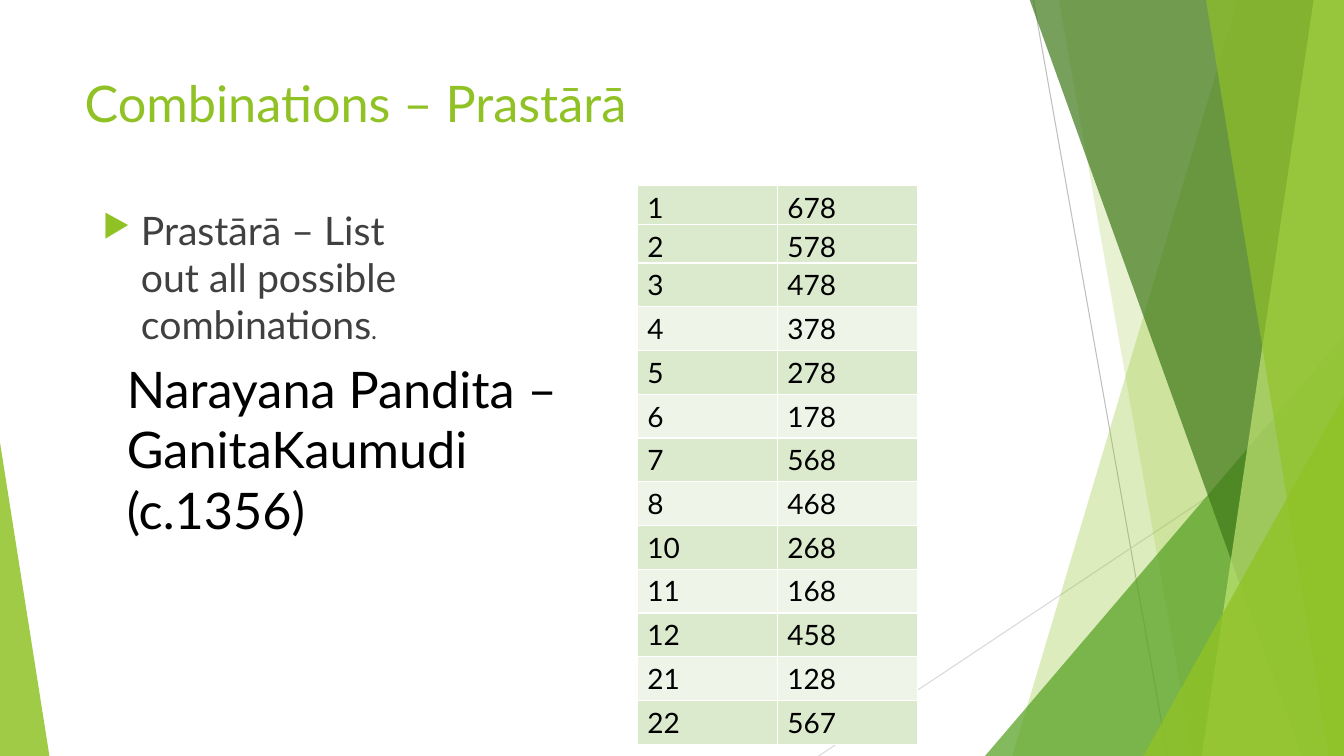
from lxml import etree
from pptx import Presentation
from pptx.dml.color import RGBColor
from pptx.enum.shapes import MSO_CONNECTOR, MSO_SHAPE
from pptx.enum.text import MSO_ANCHOR, PP_ALIGN
from pptx.oxml.ns import qn
from pptx.util import Pt

LINE = MSO_CONNECTOR.STRAIGHT
WEDGE = MSO_SHAPE.ISOSCELES_TRIANGLE
TOP, LEFT = MSO_ANCHOR.TOP, PP_ALIGN.LEFT

PX = 9144  # 100 px to the inch
WIDE, HIGH = 1333, 750
FONT = "Lato"
COLORS = {
    "lime": "90C226", "leaf": "54A021", "moss": "3F7819", "pale": "C0E474",
    "gray": "BFBFBF", "mist": "D9D9D9", "text": "404040", "black": "000000",
    "white": "FFFFFF", "dark row": "DBE9CD", "light row": "EEF4E8",
}

# Content
TITLE = "Combinations – Prastārā"
POINT = ["Prastārā – List out all possible combinations", "."]
SOURCE = "Narayana Pandita – GanitaKaumudi\v(c.1356)"
TABLES = [
    (184, [(1, 678)]),
    (223, [(2, 578)]),
    (261, [(3, 478), (4, 378), (5, 278), (6, 178), (7, 568), (8, 468),
           (10, 268), (11, 168), (12, 458), (21, 128), (22, 567)]),
]
TABLE_X, COL, ROW = 632, 139, 41

# Decoration: lines as x1, y1, x2, y2; bands as top x, bottom x;
# wedges as left, top, width, apex side
RAYS = [((1025, 0, 1158, HIGH), "gray"), ((1333, 403, 812, HIGH), "mist")]
DECOR = [
    ((1228, 1004), "lime", 30),
    ((1050, 1183), "lime", 20),
    ((977, 333, 356, 1), "leaf", 72),
    ((1021, 1291), "moss", 70),
    ((1303, 1192), "pale", 70),
    ((1196, 1318), "lime", 65),
    ((1134, 393, 199, 1), "lime", 80),
    ((0, 439, 49, 0), "lime", 85),
]


def rgb(name):
    return RGBColor.from_string(COLORS[name])


def box(*nums):
    return [n * PX for n in nums]


def style(run, size, color):
    run.font.size = Pt(size)
    run.font.name = FONT
    run.font.color.rgb = rgb(color)


def paint(shape, color, alpha):
    shape.shadow.inherit = False
    shape.fill.solid()
    shape.fill.fore_color.rgb = rgb(color)
    tone = shape.element.spPr.find(".//" + qn("a:srgbClr"))
    etree.SubElement(tone, qn("a:alpha"), val=str(alpha * 1000))
    shape.line.fill.background()


def add_text(shapes, area):
    frame = shapes.add_textbox(*box(*area)).text_frame
    frame.word_wrap = True
    return frame.paragraphs[0]


def edge(cell):
    props = cell._tc.get_or_add_tcPr()
    for i, side in enumerate(("lnL", "lnR", "lnT", "lnB")):
        line = etree.Element(qn("a:" + side), w=str(Pt(1)))
        fill = etree.SubElement(line, qn("a:solidFill"))
        etree.SubElement(fill, qn("a:srgbClr"), val=COLORS["white"])
        props.insert(i, line)


def add_grid(shapes, top, rows):
    area = box(TABLE_X, top, 2 * COL, ROW * len(rows))
    grid = shapes.add_table(len(rows), 2, *area).table
    for r, row in enumerate(rows):
        for c, value in enumerate(row):
            cell = grid.cell(r, c)
            cell.text = str(value)
            style(cell.text_frame.paragraphs[0].runs[0], 20, "black")
            cell.fill.solid()
            cell.fill.fore_color.rgb = rgb("light row" if r % 2 else "dark row")
            edge(cell)


deck = Presentation()
deck.slide_width, deck.slide_height = box(WIDE, HIGH)
slide = deck.slides.add_slide(deck.slide_layouts[5])
shapes = slide.shapes

# Thin rays
for ends, color in RAYS:
    ray = shapes.add_connector(LINE, *box(*ends))
    ray.line.color.rgb = rgb(color)
    ray.line.width = Pt(0.75)
    etree.SubElement(ray.element.spPr, qn("a:effectLst"))

# Bands and wedges
for form, color, alpha in DECOR:
    if len(form) == 2:
        top, foot = form
        path = shapes.build_freeform(top, -1, scale=PX)
        path.add_line_segments([(WIDE, -1), (WIDE, HIGH), (foot, HIGH)])
        shape = path.convert_to_shape()
    else:
        x, y, width, apex = form
        shape = shapes.add_shape(WEDGE, *box(x, y, width, HIGH - y))
        shape.adjustments[0] = apex
    paint(shape, color, alpha)

# Title, in front of the decoration
title = shapes.title
title.left, title.top, title.width, title.height = box(74, 67, 940, 144)
title.text_frame.text = TITLE
title.text_frame.vertical_anchor = TOP
head = title.text_frame.paragraphs[0]
head.alignment = LEFT
style(head.runs[0], 36, "lime")
shapes.element.append(title.element)

# Bullet point
para = add_text(shapes, (92, 200, 334, 476))
for words, size in zip(POINT, (28, 18)):
    run = para.add_run()
    run.text = words
    style(run, size, "text")
para.space_before = Pt(10)
props = para._p.get_or_add_pPr()
props.set("marL", str(38 * PX))
props.set("indent", str(-38 * PX))
tint = etree.SubElement(props, qn("a:buClr"))
etree.SubElement(tint, qn("a:srgbClr"), val=COLORS["lime"])
etree.SubElement(props, qn("a:buSzPct"), val="80000")
etree.SubElement(props, qn("a:buChar"), char="▶")

# Tables
for top, rows in TABLES:
    add_grid(shapes, top, rows)

# Source note
note = add_text(shapes, (116, 350, 516, 192))
note.text = SOURCE
for run in note.runs:
    style(run, 36, "black")

deck.save("out.pptx")
